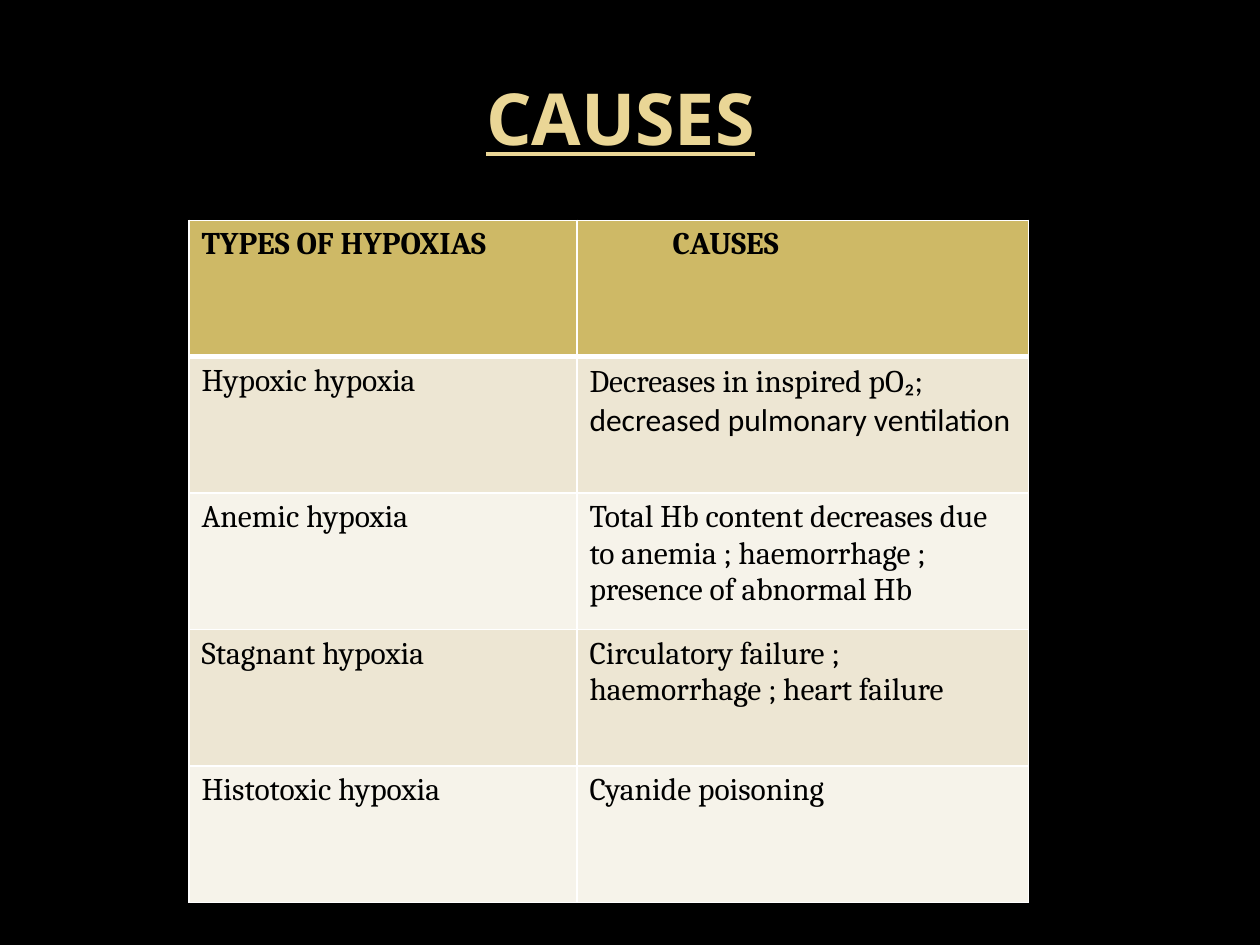
from lxml.etree import SubElement
from pptx import Presentation
from pptx.dml.color import RGBColor
from pptx.enum.text import MSO_ANCHOR, PP_ALIGN
from pptx.oxml import parse_xml
from pptx.oxml.ns import nsdecls, qn
from pptx.util import Cm, Pt

BLACK = RGBColor(0x00, 0x00, 0x00)
WHITE = RGBColor(0xFF, 0xFF, 0xFF)
PALE_GOLD = RGBColor(0xEA, 0xD6, 0x96)
GOLD = RGBColor(0xCE, 0xB9, 0x66)
BANDS = [RGBColor(0xED, 0xE6, 0xD3), RGBColor(0xF6, 0xF3, 0xEA)]

# Content: each cell is a list of (text, font name) runs
TITLE = "CAUSES"
ROWS = [
    ([("TYPES OF HYPOXIAS", "Cambria")], [("CAUSES", "Cambria")]),
    ([("Hypoxic hypoxia", "Cambria")],
     [("Decreases in inspired pO", "Cambria"),
      ("₂; decreased pulmonary ventilation", "Calibri")]),
    ([("Anemic hypoxia", "Cambria")],
     [("Total Hb content decreases due to anemia ; haemorrhage ; "
       "presence of abnormal Hb", "Cambria")]),
    ([("Stagnant hypoxia", "Cambria")],
     [("Circulatory failure ; haemorrhage ; heart failure", "Cambria")]),
    ([("Histotoxic hypoxia", "Cambria")], [("Cyanide poisoning", "Cambria")]),
]
COLUMN_WIDTHS = [Cm(7.82), Cm(9.1)]
ROW_HEIGHT = Cm(2.75)
TITLE_FORMAT = {"name": "Noto Sans", "size": Pt(41), "bold": True, "underline": True}


def add_run(paragraph, text, color, font_format):
    run = paragraph.add_run()
    run.text = text
    run.font.color.rgb = color
    for name, value in font_format.items():
        setattr(run.font, name, value)


def set_borders(cell, widths):
    """Put white lines around a cell; widths maps side letters to points."""
    properties = cell._tc.get_or_add_tcPr()
    for position, (side, width) in enumerate(widths.items()):
        line = parse_xml(f'<a:ln{side} {nsdecls("a")} w="{Pt(width)}"/>')
        fill = SubElement(line, qn("a:solidFill"))
        SubElement(fill, qn("a:srgbClr"), val=str(WHITE))
        properties.insert(position, line)


presentation = Presentation()
presentation.slide_width, presentation.slide_height = Cm(25.4), Cm(19.05)
slide = presentation.slides.add_slide(presentation.slide_layouts[6])
slide.background.fill.solid()
slide.background.fill.fore_color.rgb = BLACK

# Title, set slightly left of centre by a wider right margin
title_box = slide.shapes.add_textbox(Cm(1.27), Cm(0.76), Cm(22.86), Cm(3.18))
frame_format = {"word_wrap": True, "vertical_anchor": MSO_ANCHOR.MIDDLE,
                "margin_right": Cm(0.63)}
for name, value in frame_format.items():
    setattr(title_box.text_frame, name, value)
title_paragraph = title_box.text_frame.paragraphs[0]
title_paragraph.alignment = PP_ALIGN.CENTER
add_run(title_paragraph, TITLE, PALE_GOLD, TITLE_FORMAT)

# Table grid
table = slide.shapes.add_table(
    len(ROWS), len(COLUMN_WIDTHS), Cm(3.81), Cm(4.44),
    sum(COLUMN_WIDTHS), ROW_HEIGHT * len(ROWS)).table
for column, width in zip(table.columns, COLUMN_WIDTHS):
    column.width = width
for row in table.rows:
    row.height = ROW_HEIGHT

# Table cells: gold header, then alternating bands
for row_index, row_content in enumerate(ROWS):
    is_header = row_index == 0
    for column_index, runs in enumerate(row_content):
        cell = table.cell(row_index, column_index)
        cell.fill.solid()
        cell.fill.fore_color.rgb = GOLD if is_header else BANDS[(row_index - 1) % 2]
        set_borders(cell, {"L": 1, "R": 1, "T": 3 if row_index == 1 else 1,
                           "B": 3 if is_header else 1})
        for text, font_name in runs:
            add_run(cell.text_frame.paragraphs[0], text, BLACK,
                    {"name": font_name, "size": Pt(18), "bold": is_header})
table.cell(0, 1).margin_left = Cm(1.93)

presentation.save("out.pptx")
